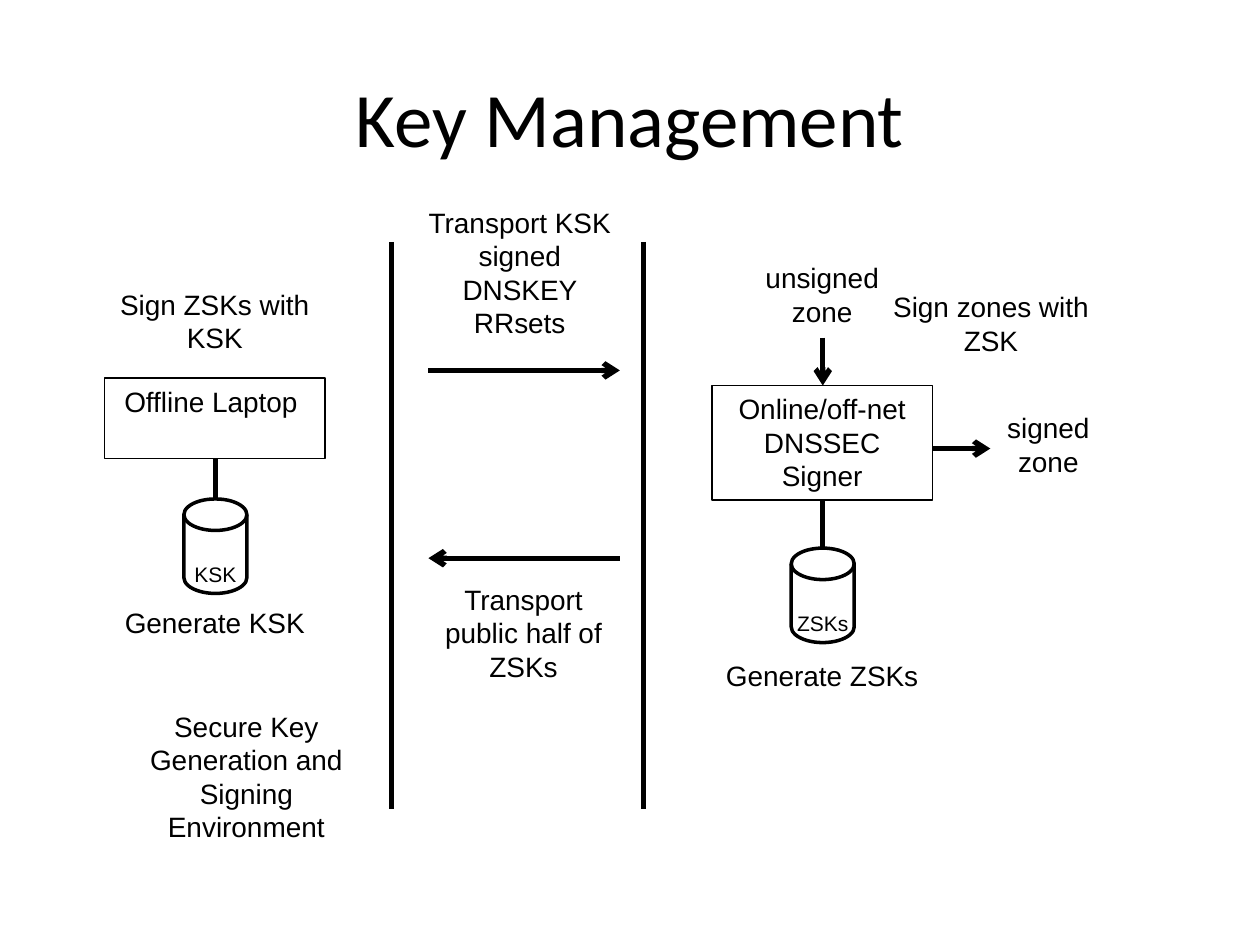
from pptx import Presentation
from pptx import util as u
from pptx.dml.color import RGBColor
from pptx.enum import shapes, text
from pptx.oxml.ns import qn
from lxml import etree

BLACK = RGBColor(0x00, 0x00, 0x00)


def write(tf, content, size=16, font="Arial", color=BLACK, anchor=text.MSO_ANCHOR.TOP):
    """Fill a text frame with centred text, one paragraph per line."""
    tf.word_wrap = True
    tf.auto_size = text.MSO_AUTO_SIZE.NONE
    tf.vertical_anchor = anchor
    for i, line in enumerate(content.split("\n")):
        p = tf.add_paragraph() if i else tf.paragraphs[0]
        p.alignment = text.PP_ALIGN.CENTER
        r = p.add_run()
        r.text = line
        r.font.size = u.Pt(size)
        r.font.name = font
        r.font.color.rgb = color


class Diagram:
    """Holds the slide and the drawing style."""
    color = BLACK
    box_line, disk_line, link_line = 0.75, 2, 3
    disk_w, disk_h = 0.5, 0.75

    def __init__(self, s):
        self.s = s

    def title(self, content, *box):
        sp = self.s.shapes.title
        sp.left, sp.top, sp.width, sp.height = map(u.Inches, box)
        write(sp.text_frame, content, size=44, font="Calibri", anchor=text.MSO_ANCHOR.MIDDLE)

    def label(self, content, x, y, w=1.75, h=0.37, **fmt):
        sp = self.s.shapes.add_textbox(*map(u.Inches, (x, y, w, h)))
        write(sp.text_frame, content, **fmt)

    def outline(self, kind, x, y, w, h, weight):
        sp = self.s.shapes.add_shape(kind, *map(u.Inches, (x, y, w, h)))
        sp.shadow.inherit = False
        sp.fill.background()
        sp.line.color.rgb = self.color
        sp.line.width = u.Pt(weight)
        return sp

    def box(self, content, x, y, h, w=1.75):
        sp = self.outline(shapes.MSO_SHAPE.RECTANGLE, x, y, w, h, self.box_line)
        write(sp.text_frame, content)

    def key_store(self, content, center, y):
        self.outline(shapes.MSO_SHAPE.FLOWCHART_MAGNETIC_DISK, center - self.disk_w / 2, y,
                     self.disk_w, self.disk_h, self.disk_line)
        self.label(content, center - 0.31, y + 0.45, 0.62, 0.3, size=12)

    def link(self, x1, y1, x2, y2, arrow=False):
        c = self.s.shapes.add_connector(shapes.MSO_CONNECTOR.STRAIGHT,
                                        *map(u.Inches, (x1, y1, x2, y2)))
        c.line.color.rgb = self.color
        c.line.width = u.Pt(self.link_line)
        if arrow:
            etree.SubElement(c.line._get_or_add_ln(), qn("a:tailEnd"), type="arrow")
        etree.SubElement(c._element.spPr, qn("a:effectLst"))


def main():
    prs = Presentation()
    prs.slide_width, prs.slide_height = u.Inches(10), u.Inches(7.5)
    d = Diagram(prs.slides.add_slide(prs.slide_layouts[5]))
    d.title("Key Management", 0.5, 0.3, 9, 1.25)

    # Offline side: laptop and its KSK
    laptop_x = 1.71
    d.label("Sign ZSKs with KSK", 0.83, 2.23, h=0.64)
    d.box("Offline Laptop ", 0.83, 3, 0.64)
    d.link(laptop_x, 3.64, laptop_x, 3.96)
    d.key_store("KSK", laptop_x, 3.96)
    d.label("Generate KSK", 0.83, 4.76)
    d.label("Secure Key Generation and Signing Environment", 1.08, 5.58, h=1.18)

    # Transport between the two dividers
    for x in (3.11, 5.11):
        d.link(x, 1.92, x, 6.42)
    d.label("Transport KSK signed DNSKEY RRsets", 3.25, 1.58, h=1.18)
    d.link(3.4, 2.94, 4.92, 2.94, arrow=True)
    d.link(4.92, 4.43, 3.4, 4.43, arrow=True)
    d.label("Transport public half of ZSKs", 3.28, 4.57, h=0.91)

    # Online side: signer, its ZSKs and the zones
    signer_x = 6.53
    d.label("unsigned\nzone", 5.94, 2.02, 1.17, 0.64)
    d.label("Sign zones with ZSK", 6.99, 2.25, h=0.64)
    d.link(signer_x, 2.68, signer_x, 3.06, arrow=True)
    d.box("Online/off-net DNSSEC Signer", 5.65, 3.06, 0.91)
    d.link(7.4, 3.56, 7.86, 3.56, arrow=True)
    d.label("signed\nzone", 7.86, 3.21, 0.92, 0.64)
    d.link(signer_x, 3.97, signer_x, 4.35)
    d.key_store("ZSKs", signer_x, 4.35)
    d.label("Generate ZSKs", 5.65, 5.18)

    prs.save("out.pptx")


if __name__ == "__main__":
    main()
